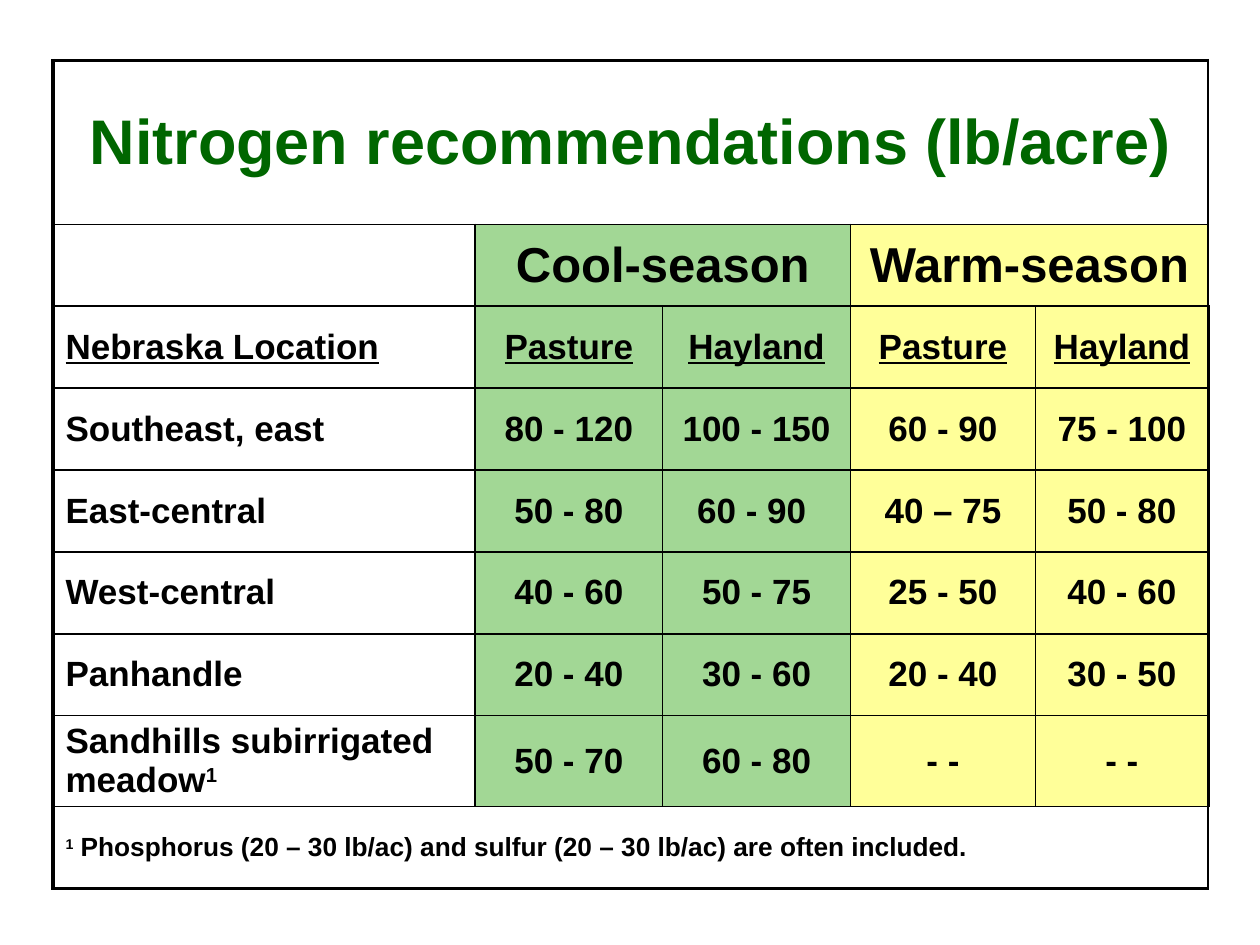
from lxml import etree
from pptx import Presentation
from pptx.dml.color import RGBColor
from pptx.enum import text
from pptx.oxml import ns
from pptx.util import Inches, Pt

THEME = {
    "font": "Arial", "ink": "000000", "title": "006600",
    "cool": "A2D795", "warm": "FFFF99",
    "title_size": 36, "season_size": 28, "body_size": 20,
    "note_size": 15, "mark_size": 14, "thin": 1, "thick": 2.25,
}

TITLE = "Nitrogen recommendations (lb/acre)"
SEASONS = [("Cool-season", 1), ("Warm-season", 3)]
HEADS = ["Nebraska Location", "Pasture", "Hayland", "Pasture", "Hayland"]
RATES = [
    ["Southeast, east", "80 - 120", "100 - 150", "60 - 90", "75 - 100"],
    ["East-central", "50 - 80", "60 - 90 ", "40 – 75", "50 - 80"],
    ["West-central", "40 - 60", "50 - 75", "25 - 50", "40 - 60"],
    ["Panhandle", "20 - 40", "30 - 60", "20 - 40", "30 - 50"],
    ["Sandhills subirrigated meadow", "50 - 70", "60 - 80", "- -", "- -"],
]
MARK = "1"
NOTE = " Phosphorus (20 – 30 lb/ac) and sulfur (20 – 30 lb/ac) are often included."

LEFT, TOP = 0.42, 0.48
COLS = [3.35, 1.49, 1.49, 1.47, 1.37]
ROWS = [1.3] + [0.65] * 8
LAST_ROW, LAST_COL = len(ROWS) - 1, len(COLS) - 1


def write(cell, words, size="body_size", color="ink", center=False,
          under=False, raised=False):
    """Append a run to the cell's paragraph."""
    para = cell.text_frame.paragraphs[0]
    para.alignment = text.PP_ALIGN.CENTER if center else text.PP_ALIGN.LEFT
    run = para.add_run()
    run.text = words
    font = run.font
    font.name, font.size, font.bold = THEME["font"], Pt(THEME[size]), True
    font.underline = under
    font.color.rgb = RGBColor.from_string(THEME[color])
    if raised:
        run._r.get_or_add_rPr().set("baseline", "30000")


def border(cell, row, col):
    """Draw thick lines on the table's rim and thin lines inside."""
    rim = {"L": col == 0, "R": col == LAST_COL,
           "T": row == 0, "B": row == LAST_ROW}
    props = cell._tc.get_or_add_tcPr()
    for side, outer in rim.items():
        width = Pt(THEME["thick" if outer else "thin"])
        line = etree.SubElement(props, ns.qn(f"a:ln{side}"), w=str(width))
        fill = etree.SubElement(line, ns.qn("a:solidFill"))
        etree.SubElement(fill, ns.qn("a:srgbClr"), val=THEME["ink"])


def paint(cell, row, col):
    if col == 0 or row in (0, LAST_ROW):
        cell.fill.background()
    else:
        cell.fill.solid()
        tint = THEME["cool" if col < 3 else "warm"]
        cell.fill.fore_color.rgb = RGBColor.from_string(tint)


def make_grid(slide):
    frame = slide.shapes.add_table(
        len(ROWS), len(COLS), Inches(LEFT), Inches(TOP),
        Inches(sum(COLS)), Inches(sum(ROWS)))
    grid = frame.table
    grid.first_row = grid.horz_banding = False
    for col, width in enumerate(COLS):
        grid.columns[col].width = Inches(width)
    for row, height in enumerate(ROWS):
        grid.rows[row].height = Inches(height)
        for col in range(len(COLS)):
            cell = grid.cell(row, col)
            cell.vertical_anchor = text.MSO_ANCHOR.MIDDLE
            border(cell, row, col)
            paint(cell, row, col)
    return grid


def fill_grid(grid):
    for row in (0, LAST_ROW):
        grid.cell(row, 0).merge(grid.cell(row, LAST_COL))
    write(grid.cell(0, 0), TITLE, size="title_size", color="title", center=True)
    for name, col in SEASONS:
        cell = grid.cell(1, col)
        cell.merge(grid.cell(1, col + 1))
        write(cell, name, size="season_size", center=True)
    for row, items in enumerate([HEADS] + RATES, start=2):
        for col, words in enumerate(items):
            write(grid.cell(row, col), words, center=col > 0, under=row == 2)
    write(grid.cell(LAST_ROW - 1, 0), MARK, raised=True)
    note = grid.cell(LAST_ROW, 0)
    write(note, MARK, size="mark_size", raised=True)
    write(note, NOTE, size="note_size")


def main():
    deck = Presentation()
    deck.slide_width, deck.slide_height = Inches(10), Inches(7.5)
    slide = deck.slides.add_slide(deck.slide_layouts[6])
    fill_grid(make_grid(slide))
    deck.save("out.pptx")


if __name__ == "__main__":
    main()
